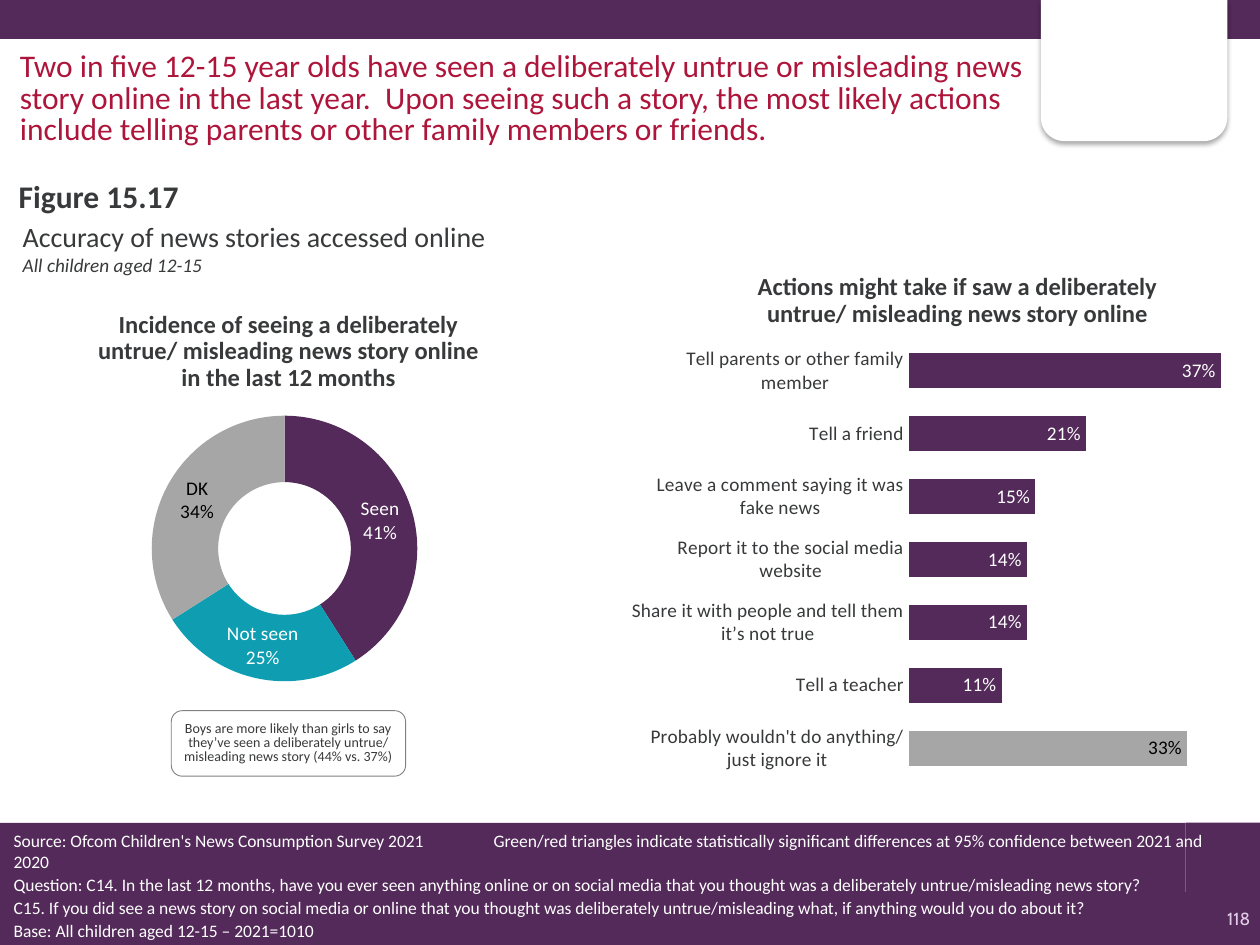
from lxml.etree import SubElement
from pptx import Presentation
from pptx.chart.data import CategoryChartData
from pptx.dml.color import RGBColor
from pptx.enum.chart import XL_CHART_TYPE, XL_LABEL_POSITION, XL_TICK_MARK
from pptx.enum.shapes import MSO_SHAPE
from pptx.enum.text import MSO_ANCHOR, MSO_AUTO_SIZE, PP_ALIGN
from pptx.oxml.ns import qn
from pptx.util import Inches, Pt

HUES = {"plum": "532A59", "teal": "0F9EB1", "gray": "A6A6A6", "ink": "38393A",
        "red": "AE153B", "white": "FFFFFF", "black": "000000",
        "edge": "808080", "lilac": "E3CCE7"}
LEFT, MID, RIGHT = PP_ALIGN.LEFT, PP_ALIGN.CENTER, PP_ALIGN.RIGHT

BANDS = [(0, 7.08, 10, 0.44), (0, 0, 10, 0.31), (9.41, 6.53, 0.59, 0.6), (0, 6.53, 9.41, 0.95)]
TITLE = [("Accuracy of news stories accessed online", 16, False),
         ("All children aged 12-15", 11, True)]
TEXTS = [
    ((0.06, 0.37, 8.35, 0.77), "Two in five 12-15 year olds have seen a deliberately untrue or "
     "misleading news story online in the last year.  Upon seeing such a story, the most likely "
     "actions include telling parents or other family members or friends.",
     18, "red", False, LEFT, Pt(18)),
    ((0.05, 1.36, 9.89, 0.33), "Figure 15.17", 18, "ink", True, LEFT, 1.0),
    ((0.62, 2.43, 3.34, 0.33), "Incidence of seeing a deliberately untrue/ misleading news story "
     "online in the last 12 months", 14, "ink", True, MID, 0.9),
    ((5.3, 2.13, 4.6, 0.33), "Actions might take if saw a deliberately\v"
     "untrue/ misleading news story online", 14, "ink", True, MID, 0.9),
]
NOTE = ("Boys are more likely than girls to say they’ve seen a deliberately untrue/ "
        "misleading news story (44% vs. 37%)")
FOOT = [
    "Source: Ofcom Children's News Consumption Survey 2021\tGreen/red triangles indicate "
    "statistically significant differences at 95% confidence between 2021 and 2020",
    "Question: C14. In the last 12 months, have you ever seen anything online or on social media "
    "that you thought was a deliberately untrue/misleading news story?",
    "C15. If you did see a news story on social media or online that you thought was deliberately "
    "untrue/misleading what, if anything would you do about it?",
    "Base: All children aged 12-15 – 2021=1010",
]
SEEN = [("Seen", 0.41, "plum"), ("Not seen", 0.25, "teal"), ("DK", 0.34, "gray")]
ACTS = [
    ("Tell parents or other family member", 0.37, "plum"),
    ("Tell a friend", 0.21, "plum"),
    ("Leave a comment saying it was fake news", 0.15, "plum"),
    ("Report it to the social media website", 0.14, "plum"),
    ("Share it with people and tell them it’s not true", 0.14, "plum"),
    ("Tell a teacher", 0.11, "plum"),
    ("Probably wouldn't do anything/ just ignore it", 0.33, "gray"),
]


def tint(hue):
    return RGBColor.from_string(HUES[hue])


def style(font, size, hue, face="Calibri"):
    font.size, font.name = Pt(size), face
    font.color.rgb = tint(hue)


def write(para, text, size, hue, bold=False, face="Calibri"):
    for num, part in enumerate(text.split("\v")):
        if num:
            para.add_line_break()
        run = para.add_run()
        run.text = part
        style(run.font, size, hue, face)
        run.font.bold = bold


def block(slide, box):
    frame = slide.shapes.add_textbox(*map(Inches, box)).text_frame
    frame.word_wrap = True
    return frame


def shape(slide, kind, box, hue):
    item = slide.shapes.add_shape(kind, *map(Inches, box))
    item.shadow.inherit = False
    item.fill.solid()
    item.fill.fore_color.rgb = tint(hue)
    item.line.fill.background()
    return item


def shade(item):
    fx = item._element.spPr.find(qn("a:effectLst"))
    drop = SubElement(fx, qn("a:outerShdw"), blurRad=str(Pt(3.1)), dist=str(Pt(1.8)),
                      dir="5400000", algn="t", rotWithShape="0")
    color = SubElement(drop, qn("a:srgbClr"), val=HUES["black"])
    SubElement(color, qn("a:alpha"), val="35000")


def place(chart, area):
    plot = chart._chartSpace.chart.plotArea
    for old in plot.findall(qn("c:layout")):
        plot.remove(old)
    lay = SubElement(plot, qn("c:layout"))
    plot.insert(0, lay)
    spot = SubElement(lay, qn("c:manualLayout"))
    pairs = [("layoutTarget", "inner"), ("xMode", "edge"), ("yMode", "edge")]
    for tag, val in pairs + list(zip("xywh", area)):
        SubElement(spot, qn("c:" + tag), val=str(val))


def graph(slide, kind, box, rows, size, area, pos=None):
    data = CategoryChartData(number_format="0%")
    data.categories = [row[0] for row in rows]
    data.add_series("Series 1", [row[1] for row in rows])
    chart = slide.shapes.add_chart(kind, *map(Inches, box), data).chart
    chart.has_legend = chart.has_title = False
    style(chart.font, size, "ink")
    place(chart, area)
    plot = chart.plots[0]
    plot.vary_by_categories = False
    line = plot.series[0]
    tags = line.data_labels
    tags.show_value = True
    tags.number_format, tags.number_format_is_linked = "0%", False
    style(tags.font, 11, "white")
    if pos is not None:
        tags.position = pos
    for num, (_, _, hue) in enumerate(rows):
        point = line.points[num]
        point.format.fill.solid()
        point.format.fill.fore_color.rgb = tint(hue)
        if hue == "gray":
            style(point.data_label.font, 11, "black")
            if pos is not None:
                point.data_label.position = pos
    return chart


def ring(slide):
    chart = graph(slide, XL_CHART_TYPE.DOUGHNUT, (0.25, 2.77, 4.15, 2.89), SEEN, 10,
                  (0.23, 0.183, 0.508, 0.73))
    root = chart.plots[0].series[0]._element
    for flag in root.iter(qn("c:showCatName")):
        flag.set("val", "1")
    for last in list(root.iter(qn("c:showBubbleSize"))):
        gap = SubElement(last.getparent(), qn("c:separator"))
        gap.text = "\n"
        last.addnext(gap)
    for hole in chart._chartSpace.iter(qn("c:holeSize")):
        hole.set("val", "58")


def bars(slide):
    chart = graph(slide, XL_CHART_TYPE.BAR_CLUSTERED, (4.95, 2.45, 4.94, 3.8), ACTS, 10.5,
                  (0.497, 0.064, 0.542, 0.92), XL_LABEL_POSITION.INSIDE_END)
    chart.plots[0].gap_width = 80
    cat, val = chart.category_axis, chart.value_axis
    cat.reverse_order = True
    cat.major_tick_mark = XL_TICK_MARK.NONE
    cat.format.line.fill.background()
    style(cat.tick_labels.font, 11, "ink")
    val.minimum_scale, val.maximum_scale, val.major_unit = 0, 0.4, 0.1
    val.has_major_gridlines = val.visible = False


def main():
    """Build the slide on the accuracy of online news stories."""
    deck = Presentation()
    deck.slide_width, deck.slide_height = Inches(10), Inches(7.5)
    slide = deck.slides.add_slide(deck.slide_layouts[5])
    for box in BANDS:
        shape(slide, MSO_SHAPE.RECTANGLE, box, "plum")
    card = shape(slide, MSO_SHAPE.ROUND_2_SAME_RECTANGLE, (8.26, 0, 1.48, 1.12), "white")
    card.rotation = 180
    shade(card)

    title = slide.shapes.title
    title.left, title.top, title.width, title.height = map(Inches, (0.08, 1.69, 9.89, 0.33))
    frame = title.text_frame
    frame.auto_size, frame.vertical_anchor = MSO_AUTO_SIZE.NONE, MSO_ANCHOR.TOP
    para = frame.paragraphs[0]
    para.alignment = LEFT
    for num, (text, size, slant) in enumerate(TITLE):
        if num:
            para.add_line_break()
        write(para, text, size, "ink")
        para.runs[-1].font.italic = slant

    for box, text, size, hue, bold, align, space in TEXTS:
        para = block(slide, box).paragraphs[0]
        para.alignment, para.line_spacing = align, space
        write(para, text, size, hue, bold)
    ring(slide)
    bars(slide)

    note = shape(slide, MSO_SHAPE.ROUNDED_RECTANGLE, (1.36, 5.64, 1.86, 0.52), "white")
    note.line.color.rgb, note.line.width = tint("edge"), Pt(0.5)
    frame = note.text_frame
    frame.margin_left = frame.margin_right = Inches(0.02)
    frame.margin_top = frame.margin_bottom = 0
    para = frame.paragraphs[0]
    para.alignment, para.line_spacing = MID, 0.85
    write(para, NOTE, 8, "ink")

    frame = block(slide, (0.01, 6.54, 9.79, 0.96))
    for num, text in enumerate(FOOT):
        para = frame.add_paragraph() if num else frame.paragraphs[0]
        if num:
            para.space_before, para.line_spacing = Pt(2.4), 0.9
        else:
            tabs = SubElement(para._p.get_or_add_pPr(), qn("a:tabLst"))
            SubElement(tabs, qn("a:tab"), pos=str(Inches(3.81)), algn="l")
        write(para, text, 10, "white")
    para = block(slide, (9.57, 7.16, 0.45, 0.28)).paragraphs[0]
    para.alignment = RIGHT
    write(para, "118", 10, "lilac", face="Cabin")
    deck.save("out.pptx")


if __name__ == "__main__":
    main()
